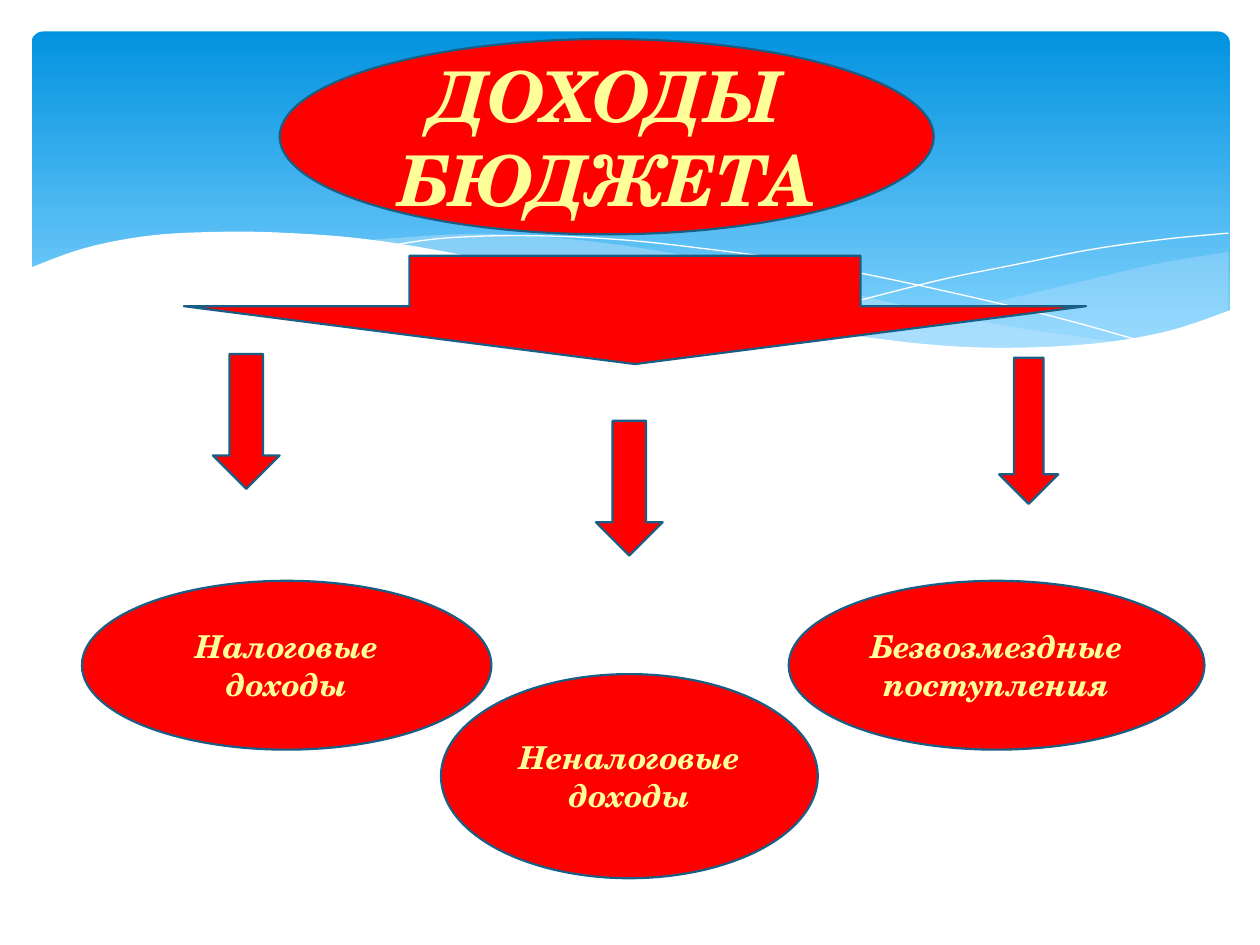
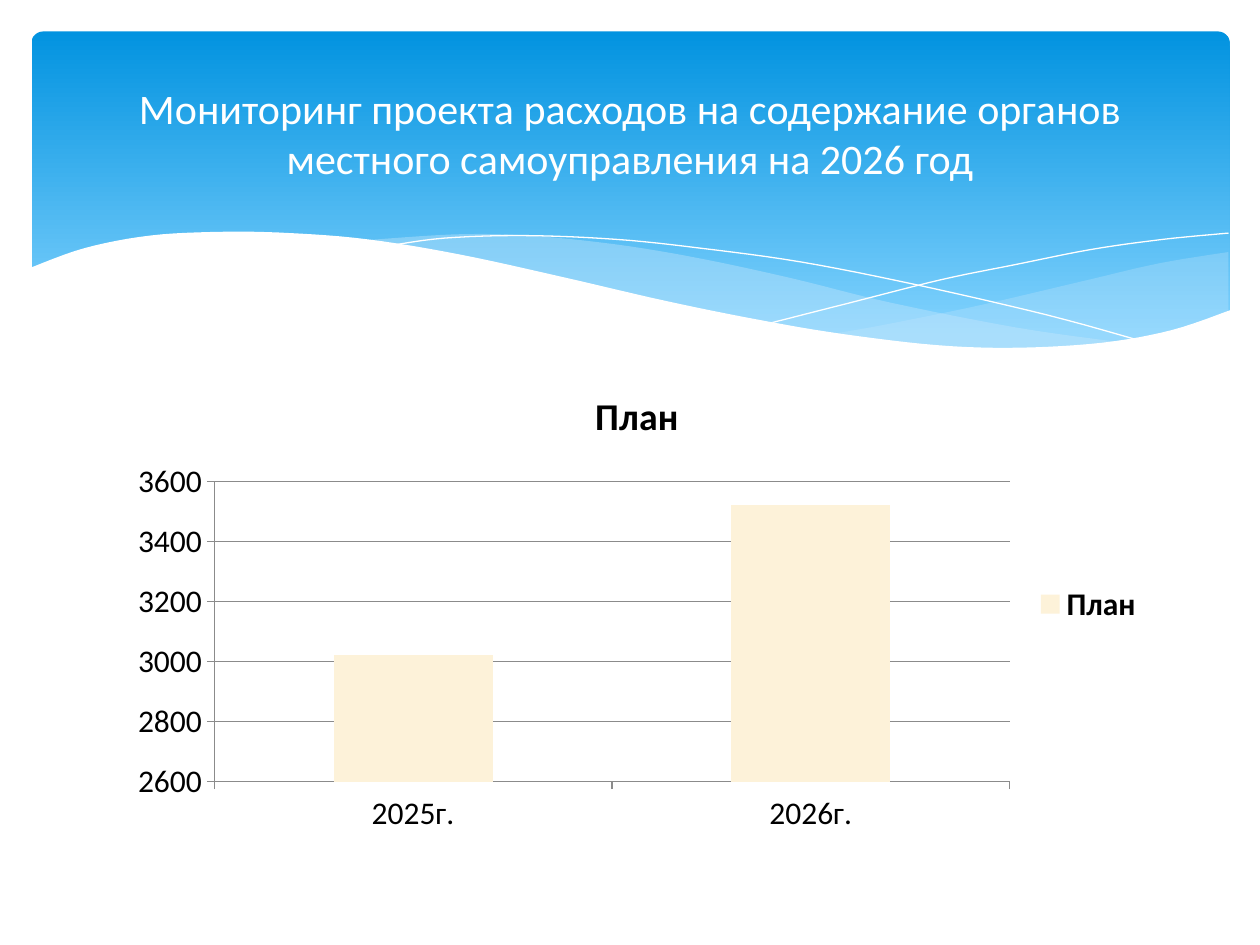
from dataclasses import dataclass
from lxml import etree
from pptx import Presentation
from pptx import util as u
from pptx.chart import data as chart_data
from pptx.dml.color import RGBColor
from pptx.enum import chart as charts, shapes, text
from pptx.oxml import ns


@dataclass(frozen=True)
class Theme:
    """Colours, fonts and type sizes."""
    sky_top: str = "0293E0"
    sky_bottom: str = "83D3FE"
    wave: str = "C6E7FC"
    white: str = "FFFFFF"
    black: str = "000000"
    red: str = "FF0000"
    outline: str = "195E84"
    yellow: str = "FFFF99"
    axis: str = "8B8B8B"
    bar: str = "FDF2D9"
    serif: str = "TeX Gyre Schola"
    sans: str = "Calibri"
    banner_size: float = 40
    title_size: float = 24
    chart_title_size: float = 21.6
    label_size: float = 18


RIGHT_WAVE = [
    [(9.75, 2), (9.2, 2.09), (8.6, 2.23), (7.79, 2.42), (7.06, 2.57), (6.61, 2.65)],
    [(6.61, 2.65), (7.18, 2.72), (7.81, 2.77), (8.34, 2.77), (8.89, 2.71),
     (9.35, 2.61), (9.75, 2.47)],
]
CENTRE_WAVE = [
    [(8.92, 2.72), (8.07, 2.6), (7.06, 2.4), (6.29, 2.21), (5.55, 2.05),
     (4.89, 1.94), (4.2, 1.87), (3.61, 1.86), (2.86, 1.91)],
    [(2.86, 1.91), (3.62, 2.03), (4.49, 2.21), (5.29, 2.4), (6.01, 2.55),
     (6.8, 2.68), (7.48, 2.75), (8.17, 2.78), (8.92, 2.72)],
]
FALLING_LINE = [
    [(3.09, 1.95), (3.53, 1.89), (4.16, 1.87), (4.89, 1.9), (5.56, 1.97),
     (6.36, 2.08), (7.27, 2.26), (8.31, 2.5), (9.07, 2.71)],
]
RISING_LINE = [
    [(6.13, 2.56), (6.72, 2.41), (7.47, 2.22), (8.06, 2.1), (8.66, 1.98),
     (9.23, 1.9), (9.75, 1.85)],
]
WHITE_WAVE = [
    [(9.77, 2.46), (9.3, 2.62), (8.75, 2.72), (8.08, 2.76), (7.44, 2.74),
     (6.68, 2.65), (6.03, 2.54), (5.29, 2.39), (4.47, 2.2), (3.65, 2.02),
     (2.92, 1.9), (2.3, 1.85), (1.76, 1.84), (1.19, 1.87), (0.67, 1.97),
     (0.23, 2.13)],
    [(0.23, 3.29), (9.77, 3.29)],
]


def smooth_curve(points, steps=6):
    """Return points along a Catmull-Rom spline through the given points."""
    if len(points) < 3:
        return points
    padded = [points[0], *points, points[-1]]
    curve = [points[0]]
    for before, start, end, after in zip(padded, padded[1:], padded[2:], padded[3:]):
        for step in range(1, steps + 1):
            t = step / steps
            curve.append(tuple(
                b + t * (c - a + t * (2 * a - 5 * b + 4 * c - d + t * (3 * b - a - 3 * c + d))) / 2
                for a, b, c, d in zip(before, start, end, after)))
    return curve


class Deck:
    """Holds the theme and current slide and draws each kind of element."""

    def __init__(self, theme):
        """Start an empty presentation."""
        self.theme = theme
        self.presentation = Presentation()
        self.presentation.slide_width = u.Inches(10)
        self.presentation.slide_height = u.Inches(7.5)
        self.slide = None

    def add_slide(self):
        """Add a blank slide with the shared wave band."""
        self.slide = self.presentation.slides.add_slide(self.presentation.slide_layouts[6])
        self.sky()
        self.wave(RIGHT_WAVE, self.theme.wave, opacity=29)
        self.wave(CENTRE_WAVE, self.theme.wave, opacity=40)
        self.wave(FALLING_LINE)
        self.wave(RISING_LINE)
        self.wave(WHITE_WAVE, self.theme.white)

    def preset(self, kind, box, adjustments=()):
        """Add a preset shape without a shadow."""
        shape = self.slide.shapes.add_shape(kind, *map(u.Inches, box))
        shape.shadow.inherit = False
        for index, value in enumerate(adjustments):
            shape.adjustments[index] = value
        return shape

    def sky(self):
        """Draw the gradient panel behind the waves."""
        panel = self.preset(shapes.MSO_SHAPE.ROUNDED_RECTANGLE, (0.25, 0.25, 9.51, 2.7), [0.034])
        panel.line.fill.background()
        panel.fill.gradient()
        panel.fill.gradient_angle = 270
        stops = ((0, self.theme.sky_top), (0.9, self.theme.sky_bottom))
        for stop, (position, color) in zip(panel.fill.gradient_stops, stops):
            stop.position = position
            stop.color.rgb = RGBColor.from_string(color)

    def wave(self, curves, color=None, opacity=100):
        """Draw a filled wave, or a white hairline when no colour is given."""
        points = [tuple(map(u.Inches, point)) for curve in curves for point in smooth_curve(curve)]
        builder = self.slide.shapes.build_freeform(*points[0])
        builder.add_line_segments(points[1:], close=color is not None)
        shape = builder.convert_to_shape()
        shape.shadow.inherit = False
        if color is None:
            shape.fill.background()
            shape.line.color.rgb = RGBColor.from_string(self.theme.white)
            shape.line.width = u.Pt(0)
            return
        shape.line.fill.background()
        shape.fill.solid()
        shape.fill.fore_color.rgb = RGBColor.from_string(color)
        if opacity < 100:
            fill_color = next(shape.element.iter(ns.qn("a:srgbClr")))
            etree.SubElement(fill_color, ns.qn("a:alpha"), val=str(opacity * 1000))

    def red_shape(self, kind, box, adjustments=()):
        """Add a red outlined shape."""
        shape = self.preset(kind, box, adjustments)
        shape.fill.solid()
        shape.fill.fore_color.rgb = RGBColor.from_string(self.theme.red)
        shape.line.color.rgb = RGBColor.from_string(self.theme.outline)
        shape.line.width = u.Pt(1.25)
        return shape

    def arrow(self, box, head=0.5):
        """Add a red arrow pointing down."""
        self.red_shape(shapes.MSO_SHAPE.DOWN_ARROW, box, [0.5, head])

    def ellipse(self, box, words, size):
        """Add a red ellipse with bold italic text."""
        shape = self.red_shape(shapes.MSO_SHAPE.OVAL, box)
        font = self.centre_text(shape, words, size, self.theme.yellow, self.theme.serif)
        font.bold = font.italic = True

    def title(self, words):
        """Add the slide title."""
        box = self.slide.shapes.add_textbox(*map(u.Inches, (0.5, 0.37, 9, 1.37)))
        self.centre_text(box, words, self.theme.title_size, self.theme.white, self.theme.sans)

    def centre_text(self, shape, words, size, color, name):
        """Put centred text in a shape and return its font."""
        frame = shape.text_frame
        frame.word_wrap = True
        frame.vertical_anchor = text.MSO_ANCHOR.MIDDLE
        paragraph = frame.paragraphs[0]
        paragraph.text = words
        paragraph.alignment = text.PP_ALIGN.CENTER
        self.style_font(paragraph.font, size, color, name)
        return paragraph.font

    def style_font(self, font, size, color, name, bold=False):
        """Set size, colour, typeface and weight of a font."""
        font.size = u.Pt(size)
        font.color.rgb = RGBColor.from_string(color)
        font.name = name
        font.bold = bold

    def column_chart(self, box, name, values, scale):
        """Add a single-series column chart with a title and legend."""
        theme = self.theme
        data = chart_data.CategoryChartData()
        data.categories = list(values)
        data.add_series(name, list(values.values()))
        chart = self.slide.shapes.add_chart(
            charts.XL_CHART_TYPE.COLUMN_CLUSTERED, *map(u.Inches, box), data).chart
        self.style_font(chart.font, theme.label_size, theme.black, theme.sans)

        chart.has_title = True
        paragraph = chart.chart_title.text_frame.paragraphs[0]
        paragraph.text = name
        self.style_font(paragraph.font, theme.chart_title_size, theme.black, theme.sans, True)

        chart.has_legend = True
        chart.legend.position = charts.XL_LEGEND_POSITION.RIGHT
        chart.legend.include_in_layout = False
        self.style_font(chart.legend.font, theme.label_size, theme.black, theme.sans, True)

        value_axis = chart.value_axis
        value_axis.minimum_scale, value_axis.maximum_scale, value_axis.major_unit = scale
        value_axis.has_major_gridlines = True
        for axis in (chart.category_axis, value_axis):
            axis.major_tick_mark = charts.XL_TICK_MARK.OUTSIDE
        for part in (chart.category_axis, value_axis, value_axis.major_gridlines):
            part.format.line.color.rgb = RGBColor.from_string(theme.axis)
            part.format.line.width = u.Pt(0.75)

        plot = chart.plots[0]
        plot.gap_width = 150
        plot.vary_by_categories = False
        fill = plot.series[0].format.fill
        fill.solid()
        fill.fore_color.rgb = RGBColor.from_string(theme.bar)


def income_slide(deck):
    """Show the three sources of budget income."""
    deck.add_slide()
    deck.ellipse((2.22, 0.31, 5.19, 1.55), "ДОХОДЫ БЮДЖЕТА", deck.theme.banner_size)
    deck.arrow((1.46, 2.03, 7.16, 0.86), 0.534)
    sources = [
        ("Налоговые доходы", (1.69, 2.81, 0.53, 1.07), (0.65, 4.61, 3.25, 1.34)),
        ("Неналоговые доходы", (4.73, 3.34, 0.53, 1.07), (3.5, 5.35, 2.99, 1.62)),
        ("Безвозмездные поступления", (7.93, 2.84, 0.47, 1.16), (6.26, 4.61, 3.3, 1.34)),
    ]
    for words, arrow_box, ellipse_box in sources:
        deck.arrow(arrow_box)
        deck.ellipse(ellipse_box, words, deck.theme.label_size)


def expense_slide(deck):
    """Compare the planned expenses of two years."""
    deck.add_slide()
    deck.column_chart((0.93, 2.91, 8.25, 3.77), "План",
                      {"2025г.": 3020, "2026г.": 3520}, (2600, 3600, 200))
    deck.title("Мониторинг проекта расходов на содержание органов "
               "местного самоуправления на 2026 год")


def main():
    """Build and save the presentation."""
    deck = Deck(Theme())
    income_slide(deck)
    expense_slide(deck)
    deck.presentation.save("out.pptx")


if __name__ == "__main__":
    main()
